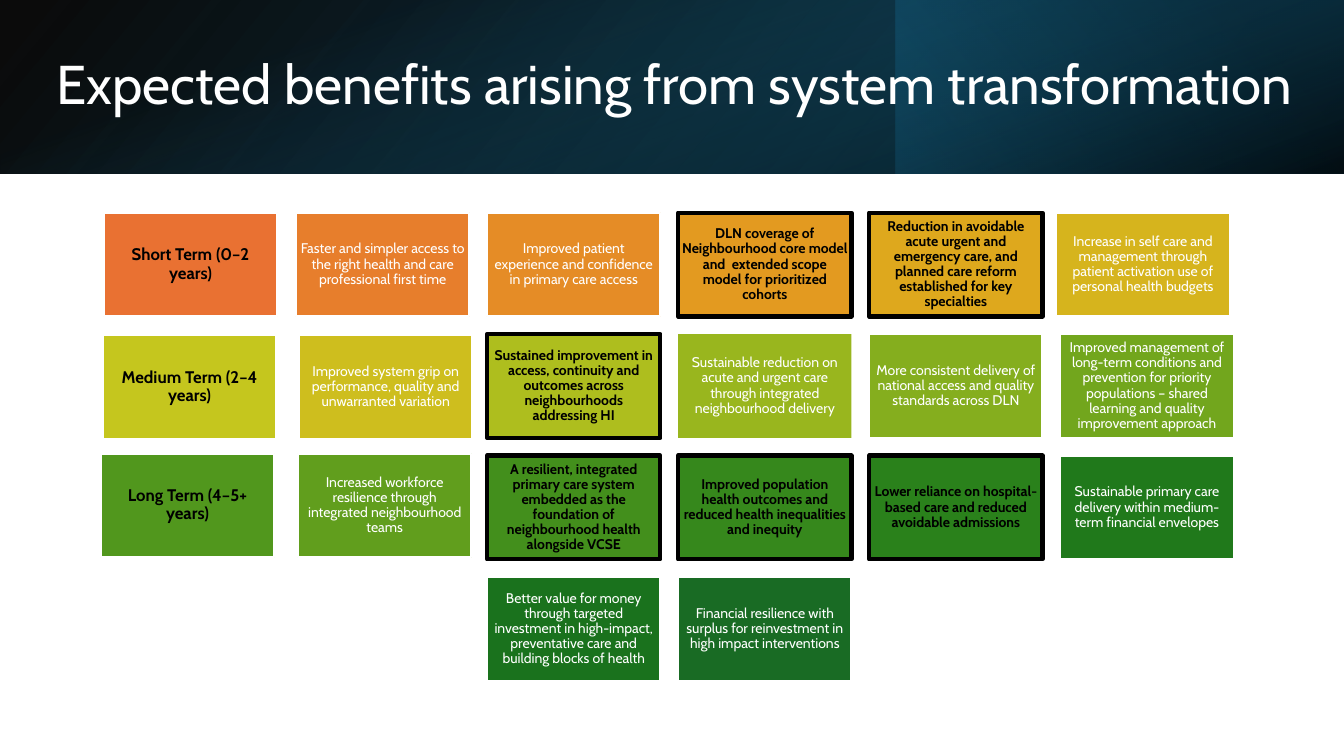
from dataclasses import dataclass

from lxml import etree
from pptx import Presentation
from pptx.dml.color import RGBColor
from pptx.enum.shapes import MSO_SHAPE
from pptx.enum.text import MSO_ANCHOR, PP_ALIGN
from pptx.oxml.ns import qn
from pptx.util import Inches, Pt

RECTANGLE = MSO_SHAPE.RECTANGLE
MIDDLE = MSO_ANCHOR.MIDDLE
CENTER, LEFT = PP_ALIGN.CENTER, PP_ALIGN.LEFT

FONT = "Cabin"
BLACK = RGBColor(0x00, 0x00, 0x00)
WHITE = RGBColor(0xFF, 0xFF, 0xFF)
DEEP_BLUE = RGBColor(0x10, 0x48, 0x62)
NIGHT_BLUE = RGBColor(0x0B, 0x30, 0x41)
TEAL = RGBColor(0x15, 0x60, 0x82)

SLIDE_WIDTH, SLIDE_HEIGHT = 13.33, 7.5
BANNER_HEIGHT = 1.72
GRID_LEFT, GRID_TOP = 1.04, 2.11
COLUMN_PITCH, ROW_PITCH = 1.895, 1.205
CARD_WIDTH, CARD_HEIGHT = 1.72, 1.03


@dataclass(frozen=True)
class CardStyle:
    size: int
    bold: bool
    text_color: RGBColor
    inset: float
    line_color: RGBColor | None
    line_width: float = 1.5


TERM = CardStyle(12, True, BLACK, 0.05, WHITE)
PLAIN = CardStyle(10, False, WHITE, 0.04, WHITE)
BORDERLESS = CardStyle(10, False, WHITE, 0.04, None)
KEY = CardStyle(10, True, BLACK, 0.04, BLACK, 3)

# Each row: first column, then (style, fill, text, shift right, shift down)
BENEFIT_ROWS = [
    (0, [
        (TERM, "E97132", "Short Term (0–2 years)", -0.01, 0),
        (PLAIN, "E77E2C", "Faster and simpler access to the right health and care "
         "professional first time", 0, 0),
        (PLAIN, "E58C26", "Improved patient experience and confidence in primary "
         "care access", 0, 0),
        (KEY, "E39A20", "DLN coverage of Neighbourhood core model and  extended "
         "scope model for prioritized cohorts", 0, 0),
        (KEY, "DEA81D", "Reduction in avoidable acute urgent and emergency care, "
         "and planned care reform established for key specialties", 0, 0),
        (PLAIN, "D6B41D", "Increase in self care and management through patient "
         "activation use of personal health budgets", -0.04, 0),
    ]),
    (0, [
        (TERM, "C5C61E", "Medium Term (2–4 years)", -0.02, 0.01),
        (PLAIN, "CEBE1E", "Improved system grip on performance, quality and "
         "unwarranted variation", 0.03, 0.01),
        (KEY, "AEBE1E", "Sustained improvement in access, continuity and outcomes "
         "across neighbourhoods addressing HI", 0, 0),
        (BORDERLESS, "99B61E", "Sustainable reduction on acute and urgent care "
         "through integrated neighbourhood delivery", 0, 0),
        (PLAIN, "85AE1E", "More consistent delivery of national access and quality "
         "standards across DLN", 0, 0),
        (PLAIN, "72A61D", "Improved management of long-term conditions and "
         "prevention for priority populations – shared learning and quality "
         "improvement approach", 0, 0),
    ]),
    (0, [
        (TERM, "51971D", "Long Term (4–5+ years)", -0.04, -0.02),
        (PLAIN, "619E1D", "Increased workforce resilience through integrated "
         "neighbourhood teams", 0.02, -0.02),
        (KEY, "438F1C", "A resilient, integrated primary care system embedded as "
         "the foundation of neighbourhood health alongside VCSE", 0, 0),
        (KEY, "36881C", "Improved population health outcomes and reduced health "
         "inequalities and inequity", 0, 0),
        (KEY, "2A811B", "Lower reliance on hospital-based care and reduced "
         "avoidable admissions", 0, 0),
        (PLAIN, "20791B", "Sustainable primary care delivery within medium-term "
         "financial envelopes", 0, 0),
    ]),
    (2, [
        (PLAIN, "1A721D", "Better value for money through targeted investment in "
         "high-impact, preventative care and building blocks of health", 0, 0),
        (PLAIN, "196B24", "Financial resilience with surplus for reinvestment in "
         "high impact interventions", 0, 0),
    ]),
]


def add_rectangle(slide, left, top, width, height):
    shape = slide.shapes.add_shape(
        RECTANGLE, Inches(left), Inches(top), Inches(width), Inches(height))
    shape.shadow.inherit = False
    return shape


def write_text(shape, text, size, color, bold, alignment, inset):
    frame = shape.text_frame
    frame.word_wrap = True
    frame.vertical_anchor = MIDDLE
    frame.margin_left = frame.margin_right = Inches(inset)
    frame.margin_top = frame.margin_bottom = Inches(min(inset, 0.05))
    paragraph = frame.paragraphs[0]
    paragraph.text = text
    paragraph.alignment = alignment
    paragraph.line_spacing = 0.9
    paragraph.font.name = FONT
    paragraph.font.size = Pt(size)
    paragraph.font.bold = bold
    paragraph.font.color.rgb = color


def set_gradient(shape, stops, angle):
    """Fill with (position, colour, opacity) stops, all in percent; angle is clockwise."""
    shape.fill.gradient()
    gradient = shape.fill._xPr.find(qn("a:gradFill"))
    gradient.clear()
    stop_list = etree.SubElement(gradient, qn("a:gsLst"))
    for position, color, opacity in stops:
        stop = etree.SubElement(stop_list, qn("a:gs"), pos=str(position * 1000))
        tone = etree.SubElement(stop, qn("a:srgbClr"), val=str(color))
        etree.SubElement(tone, qn("a:alpha"), val=str(opacity * 1000))
    etree.SubElement(gradient, qn("a:lin"), ang=str(angle * 60000), scaled="0")


def add_banner_layer(slide, box, stops, angle, rotation=0):
    layer = add_rectangle(slide, *box)
    layer.line.fill.background()
    layer.rotation = rotation
    set_gradient(layer, stops, angle)
    return layer


def add_banner(slide):
    base = add_banner_layer(
        slide, (0, 0, SLIDE_WIDTH, BANNER_HEIGHT),
        [(0, BLACK, 96), (100, DEEP_BLUE, 100)], 140)
    base._element.spPr.find(qn("a:xfrm")).set("flipH", "1")
    add_banner_layer(
        slide, (SLIDE_WIDTH * 2 / 3, 0, SLIDE_WIDTH / 3, BANNER_HEIGHT),
        [(19, NIGHT_BLUE, 68), (100, TEAL, 79)], 320, 180)
    offset = (SLIDE_WIDTH - BANNER_HEIGHT) / 2
    add_banner_layer(
        slide, (offset, -offset, BANNER_HEIGHT, SLIDE_WIDTH),
        [(23, TEAL, 0), (99, BLACK, 74)], 340, 90)


def add_title(slide, text):
    box = slide.shapes.add_textbox(
        Inches(0.46), Inches(0.38), Inches(12.62), Inches(0.96))
    write_text(box, text, 39, WHITE, False, LEFT, 0.1)


def add_card(slide, column, row, style, fill, text, shift_right, shift_down):
    card = add_rectangle(
        slide,
        GRID_LEFT + column * COLUMN_PITCH + shift_right,
        GRID_TOP + row * ROW_PITCH + shift_down,
        CARD_WIDTH, CARD_HEIGHT)
    card.fill.solid()
    card.fill.fore_color.rgb = RGBColor.from_string(fill)
    if style.line_color is None:
        card.line.fill.background()
    else:
        card.line.color.rgb = style.line_color
        card.line.width = Pt(style.line_width)
    write_text(card, text, style.size, style.text_color, style.bold, CENTER, style.inset)


def main():
    presentation = Presentation()
    presentation.slide_width = Inches(SLIDE_WIDTH)
    presentation.slide_height = Inches(SLIDE_HEIGHT)
    slide = presentation.slides.add_slide(presentation.slide_layouts[6])
    add_banner(slide)
    for row, (first_column, cards) in enumerate(BENEFIT_ROWS):
        for column, card in enumerate(cards, first_column):
            add_card(slide, column, row, *card)
    add_title(slide, "Expected benefits arising from system transformation")
    presentation.save("out.pptx")


if __name__ == "__main__":
    main()
